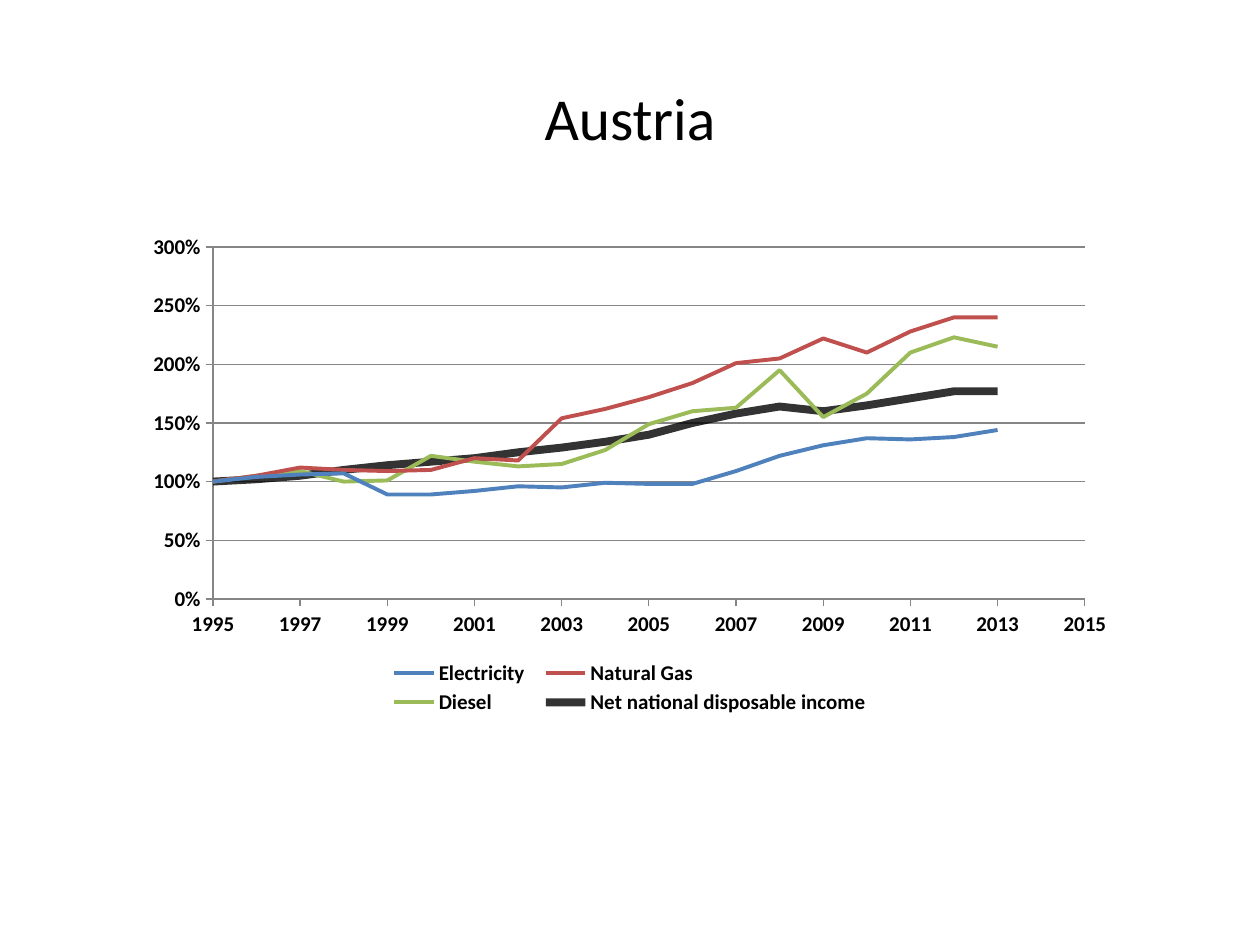
from dataclasses import dataclass

from lxml import etree
from pptx import Presentation
from pptx.chart.data import XyChartData
from pptx.dml.color import RGBColor
from pptx.enum.chart import XL_CHART_TYPE, XL_LEGEND_POSITION, XL_MARKER_STYLE, XL_TICK_MARK
from pptx.enum.text import MSO_ANCHOR, PP_ALIGN
from pptx.oxml.ns import qn
from pptx.util import Pt

LINE_CHART = XL_CHART_TYPE.XY_SCATTER_LINES_NO_MARKERS
LEGEND_BOTTOM = XL_LEGEND_POSITION.BOTTOM
NO_MARKER = XL_MARKER_STYLE.NONE
TICK_OUTSIDE, TICK_NONE = XL_TICK_MARK.OUTSIDE, XL_TICK_MARK.NONE
MIDDLE, CENTER = MSO_ANCHOR.MIDDLE, PP_ALIGN.CENTER

PX_PER_INCH = 126
FONT = "Calibri"
BLACK, GREY = "000000", "868686"
FIRST_YEAR = 1995


@dataclass
class Box:
    left: int
    top: int
    width: int
    height: int

    def emu(self) -> list[int]:
        return [px(n) for n in (self.left, self.top, self.width, self.height)]


@dataclass
class Line:
    name: str
    color: str
    values: list[float]
    width: float = 2.25
    opacity: int = 100


TITLE_BOX = Box(63, 38, 1134, 157)
CHART_BOX = Box(134, 224, 992, 496)
PLOT_BOX = Box(213, 247, 872, 352)
LEGEND_BOX = Box(380, 657, 500, 62)

LINES = [
    Line("Electricity", "4F81BD",
         [1, 1.04, 1.06, 1.07, 0.89, 0.89, 0.92, 0.96, 0.95, 0.99,
          0.98, 0.98, 1.09, 1.22, 1.31, 1.37, 1.36, 1.38, 1.44]),
    Line("Natural Gas", "C0504D",
         [1, 1.05, 1.12, 1.1, 1.09, 1.1, 1.2, 1.18, 1.54, 1.62,
          1.72, 1.84, 2.01, 2.05, 2.22, 2.1, 2.28, 2.4, 2.4]),
    Line("Diesel", "9BBB59",
         [1, 1.05, 1.09, 1, 1.01, 1.22, 1.17, 1.13, 1.15, 1.27,
          1.49, 1.6, 1.63, 1.95, 1.55, 1.75, 2.1, 2.23, 2.15]),
    Line("Net national disposable income", BLACK,
         [1, 1.02, 1.05, 1.1, 1.14, 1.17, 1.2, 1.25, 1.29, 1.34,
          1.4, 1.5, 1.58, 1.64, 1.6, 1.65, 1.71, 1.77, 1.77],
         width=4.5, opacity=80),
]


def px(length: int) -> int:
    return round(length * 914400 / PX_PER_INCH)


def rgb(color: str) -> RGBColor:
    return RGBColor.from_string(color)


def format_font(font, size: float, bold: bool = False, color: str = BLACK) -> None:
    font.name, font.size, font.bold = FONT, Pt(size), bold
    font.color.rgb = rgb(color)


def write_text(shape, text: str, *, size: float, align=CENTER, anchor=MIDDLE) -> None:
    frame = shape.text_frame
    frame.word_wrap, frame.vertical_anchor = True, anchor
    paragraph = frame.paragraphs[0]
    paragraph.alignment = align
    run = paragraph.add_run()
    run.text = text
    format_font(run.font, size)


def place_in_chart(element, box: Box, index: int, inner: bool = False) -> None:
    """Give a chart part a fixed place, as fractions of the chart."""
    for old in element.findall(qn("c:layout")):
        element.remove(old)
    layout = etree.Element(qn("c:layout"))
    manual = etree.SubElement(layout, qn("c:manualLayout"))
    settings = {
        "xMode": "edge",
        "yMode": "edge",
        "x": round((box.left - CHART_BOX.left) / CHART_BOX.width, 4),
        "y": round((box.top - CHART_BOX.top) / CHART_BOX.height, 4),
        "w": round(box.width / CHART_BOX.width, 4),
        "h": round(box.height / CHART_BOX.height, 4),
    }
    if inner:
        settings = {"layoutTarget": "inner", **settings}
    for tag, value in settings.items():
        etree.SubElement(manual, qn(f"c:{tag}")).set("val", str(value))
    element.insert(index, layout)


def format_axis(axis, low: float, high: float, step: float, number_format: str, grid: bool) -> None:
    axis.minimum_scale, axis.maximum_scale, axis.major_unit = low, high, step
    axis.major_tick_mark, axis.minor_tick_mark = TICK_OUTSIDE, TICK_NONE
    axis.has_major_gridlines = grid
    lines = [axis.format.line]
    if grid:
        lines.append(axis.major_gridlines.format.line)
    for line in lines:
        line.color.rgb, line.width = rgb(GREY), Pt(0.75)
    labels = axis.tick_labels
    labels.number_format, labels.number_format_is_linked = number_format, False
    format_font(labels.font, 12, bold=True)


def format_series(series, line: Line) -> None:
    series.smooth = False
    series.marker.style = NO_MARKER
    stroke = series.format.line
    stroke.width, stroke.color.rgb = Pt(line.width), rgb(line.color)
    if line.opacity < 100:
        color = series._element.find(".//" + qn("a:ln")).find(".//" + qn("a:srgbClr"))
        etree.SubElement(color, qn("a:alpha")).set("val", str(line.opacity * 1000))


def add_price_chart(slide) -> None:
    data = XyChartData(number_format="0%")
    for line in LINES:
        series = data.add_series(line.name)
        for year, value in enumerate(line.values, FIRST_YEAR):
            series.add_data_point(year, value)
    chart = slide.shapes.add_chart(LINE_CHART, *CHART_BOX.emu(), data).chart
    chart.has_title = False
    format_font(chart.font, 10)

    # Lines
    plot = chart.plots[0]
    plot.vary_by_categories = False
    for series, line in zip(plot.series, LINES):
        format_series(series, line)
    place_in_chart(plot._element.getparent(), PLOT_BOX, 0, inner=True)

    # Axes
    format_axis(chart.category_axis, FIRST_YEAR, 2015, 2, "General", grid=False)
    format_axis(chart.value_axis, 0, 3, 0.5, "0%", grid=True)

    # Legend in two rows
    chart.has_legend = True
    legend = chart.legend
    legend.position, legend.include_in_layout = LEGEND_BOTTOM, False
    format_font(legend.font, 12, bold=True)
    place_in_chart(legend._element, LEGEND_BOX, 1)


def main() -> None:
    presentation = Presentation()
    presentation.slide_width, presentation.slide_height = px(1260), px(945)
    slide = presentation.slides.add_slide(presentation.slide_layouts[5])

    # Title
    title = slide.shapes.title
    title.left, title.top, title.width, title.height = TITLE_BOX.emu()
    write_text(title, "Austria", size=34)

    add_price_chart(slide)
    presentation.save("out.pptx")


if __name__ == "__main__":
    main()
